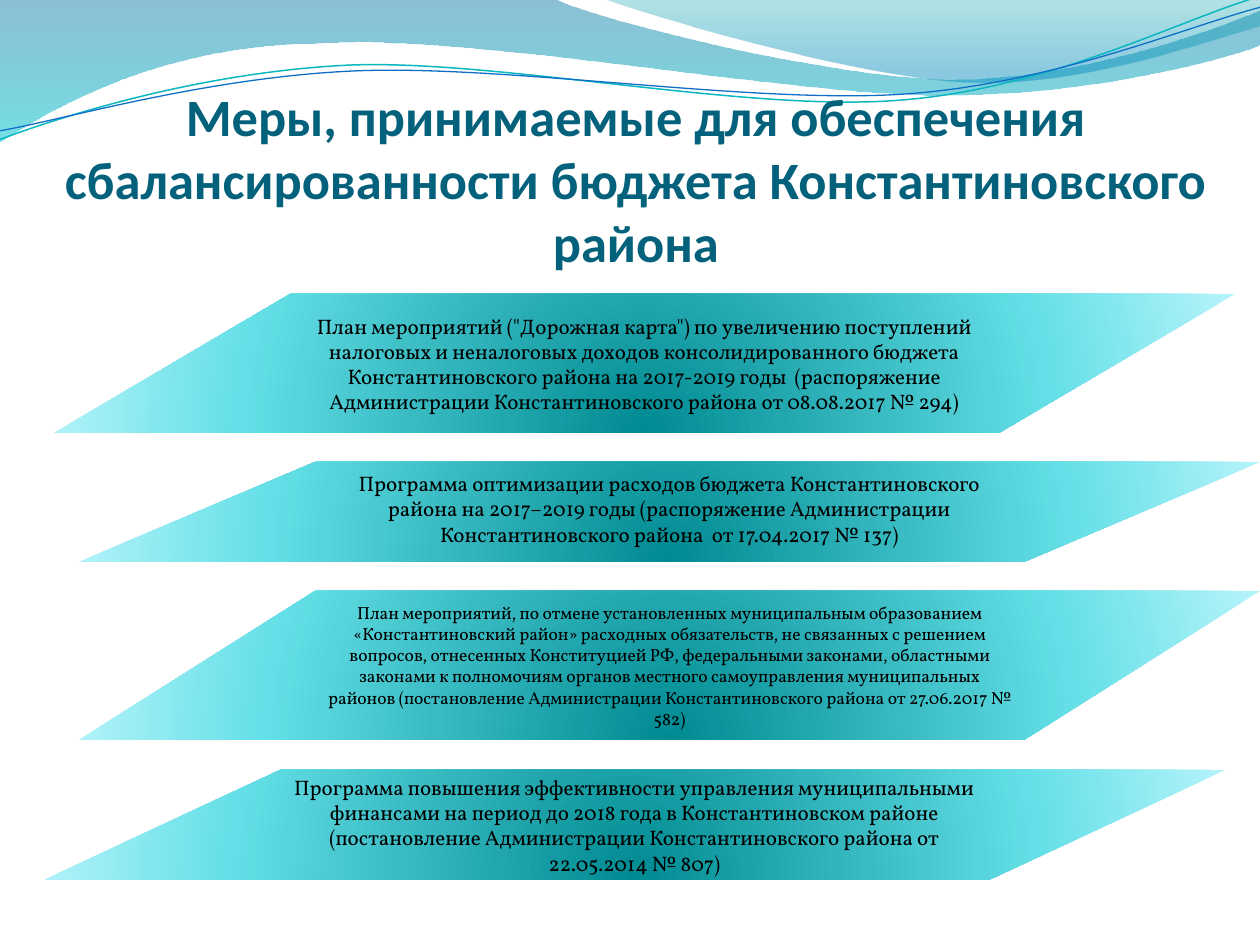
import itertools

import lxml.etree
import pptx
import pptx.dml.color
import pptx.enum.shapes
import pptx.enum.text
import pptx.oxml
import pptx.oxml.ns
import pptx.util

EMU_PER_PX = 914400 / 126
SLIDE_W, SLIDE_H = 1260, 945
NS = pptx.oxml.ns.nsdecls("a")
QN = pptx.oxml.ns.qn
ANCHOR = pptx.enum.text.MSO_ANCHOR


def px(length):
    return pptx.util.Emu(round(length * EMU_PER_PX))


def color(hex_value):
    return pptx.dml.color.RGBColor.from_string(hex_value)


def write_text(frame, text, size, font, hex_value, bold=False,
               anchor=ANCHOR.MIDDLE, insets=(12, 6, 12, 6)):
    """Fill a frame with one centred paragraph."""
    frame.word_wrap = True
    frame.vertical_anchor = anchor
    (frame.margin_left, frame.margin_top,
     frame.margin_right, frame.margin_bottom) = map(px, insets)
    paragraph = frame.paragraphs[0]
    paragraph.alignment = pptx.enum.text.PP_ALIGN.CENTER
    run = paragraph.add_run()
    run.text = text
    run.font.size = pptx.util.Pt(size)
    run.font.name = font
    run.font.bold = bold
    run.font.color.rgb = color(hex_value)


def set_gradient(shape, stops, direction):
    """Stops are (position %, colour, opacity %); direction is an XML part."""
    shape.fill.background()
    gs = "".join(
        f'<a:gs pos="{pos * 1000}"><a:srgbClr val="{rgb}">'
        f'<a:alpha val="{opacity * 1000}"/></a:srgbClr></a:gs>'
        for pos, rgb, opacity in stops)
    gradient = pptx.oxml.parse_xml(
        f'<a:gradFill {NS} rotWithShape="1"><a:gsLst>{gs}</a:gsLst>'
        f'{direction}</a:gradFill>')
    properties = shape.element.spPr
    properties.replace(properties.find(QN("a:noFill")), gradient)


class MeasuresSlide:
    TITLE_FONT, BODY_FONT = "Calibri", "Vollkorn"
    TITLE_COLOR, BODY_COLOR = "04617B", "000000"
    THREAD_TILT = 357.3
    DOWNWARD = '<a:lin ang="5400000" scaled="0"/>'
    FROM_BELOW = ('<a:path path="circle"><a:fillToRect l="50000" t="130000" '
                  'r="50000" b="-30000"/></a:path>')
    BAND_STOPS = [(0, "008A91", 100), (68, "64DFE7", 100), (100, "B1F3F9", 100)]

    def __init__(self, presentation):
        self.slide = presentation.slides.add_slide(presentation.slide_layouts[6])

    def outline(self, parts, close):
        """Draw points (x, y) and cubic curves (six numbers)."""
        numbers = [px(n) for n in itertools.chain.from_iterable(parts)]
        start, *others = zip(numbers[::2], numbers[1::2])
        builder = self.slide.shapes.build_freeform(*start)
        builder.add_line_segments(others, close=close)
        shape = builder.convert_to_shape()
        shape.shadow.inherit = False
        # Join the three points of each curve into one segment
        segments = iter(list(shape.element.spPr.iter(QN("a:lnTo"))))
        for part in parts[1:]:
            first = next(segments)
            if len(part) == 6:
                first.tag = QN("a:cubicBezTo")
                for segment in itertools.islice(segments, 2):
                    first.append(segment[0])
                    segment.getparent().remove(segment)
        return shape

    def wave(self, parts, stops):
        shape = self.outline(parts, close=True)
        shape.line.fill.background()
        set_gradient(shape, stops, self.DOWNWARD)

    def thread(self, parts, hex_value, width):
        shape = self.outline(parts, close=False)
        shape.rotation = self.THREAD_TILT
        shape.fill.background()
        shape.line.color.rgb = color(hex_value)
        shape.line.width = pptx.util.Pt(width)

    def title(self, text, x, y, w, h):
        box = self.slide.shapes.add_textbox(px(x), px(y), px(w), px(h))
        write_text(box.text_frame, text, size=30, font=self.TITLE_FONT,
                   hex_value=self.TITLE_COLOR, bold=True,
                   anchor=ANCHOR.BOTTOM, insets=(0, 6, 0, 0))

    def band(self, text, x, y, w, h, size=12, bottom=6):
        shape = self.slide.shapes.add_shape(
            pptx.enum.shapes.MSO_SHAPE.FLOWCHART_DATA, px(x), px(y), px(w), px(h))
        shape.line.fill.background()
        set_gradient(shape, self.BAND_STOPS, self.FROM_BELOW)
        shape.shadow.inherit = False
        write_text(shape.text_frame, text, size=size, font=self.BODY_FONT,
                   hex_value=self.BODY_COLOR, insets=(12, 6, 12, bottom))


def main():
    presentation = pptx.Presentation()
    presentation.slide_width, presentation.slide_height = px(SLIDE_W), px(SLIDE_H)
    page = MeasuresSlide(presentation)

    # Waves along the top edge
    page.wave([(0, -1), (554, -1), (600, 21, 837, 79, 955, 79),
               (1075, 79, 1207, 33, 1260, 11), (1261, 45),
               (1239, 55, 1096, 96, 940, 95), (784, 95, 481, 35, 324, 43),
               (163, 44, 58, 105, -1, 142), (0, -1)],
              [(0, "0074A1", 45), (100, "00C6CF", 55)])
    page.wave([(604, -1), (641, 14, 859, 78, 969, 82),
               (1079, 87, 1211, 40, 1260, 26), (1260, 0), (604, -1)],
              [(0, "00A1A9", 30), (80, "008BBF", 45)])

    # Thin threads over the waves, tilted as a whole
    page.thread([(-3, 110), (59, 90, 200, 52, 350, 52),
                 (498, 53, 745, 118, 897, 113), (1048, 109, 1184, 45, 1260, 27)],
                "0AB8BF", 0.85)
    page.thread([(-2, 101), (58, 94, 207, 57, 357, 58),
                 (508, 59, 751, 110, 902, 107), (1052, 104, 1187, 53, 1263, 37)],
                "0F6FC6", 0.75)

    # Title
    page.title("Меры, принимаемые для обеспечения сбалансированности бюджета "
               "Константиновского района", 64, 116, 1144, 157)

    # Measures: text, left, top, height and text format
    measures = [
        ('План мероприятий ("Дорожная карта") по увеличению поступлений налоговых '
         "и неналоговых доходов консолидированного бюджета Константиновского "
         "района на 2017-2019 годы  (распоряжение Администрации "
         "Константиновского района от 08.08.2017 № 294)", 54, 294, 139, {}),
        ("Программа оптимизации расходов бюджета Константиновского района на "
         "2017–2019 годы (распоряжение Администрации Константиновского района  "
         "от 17.04.2017 № 137)", 79, 462, 100, {"bottom": 13}),
        ("План мероприятий, по отмене установленных муниципальным образованием "
         "«Константиновский район» расходных обязательств, не связанных с "
         "решением вопросов, отнесенных Конституцией РФ, федеральными законами, "
         "областными законами к полномочиям органов местного самоуправления "
         "муниципальных районов (постановление Администрации Константиновского "
         "района от 27.06.2017 № 582)", 79, 591, 149, {"size": 10}),
        ("Программа повышения эффективности управления муниципальными финансами "
         "на период до 2018 года в Константиновском районе (постановление "
         "Администрации Константиновского района от 22.05.2014 № 807)",
         44, 770, 110, {}),
    ]
    for text, left, top, height, text_format in measures:
        page.band(text, left, top, 1181, height, **text_format)

    presentation.save("out.pptx")


if __name__ == "__main__":
    main()
